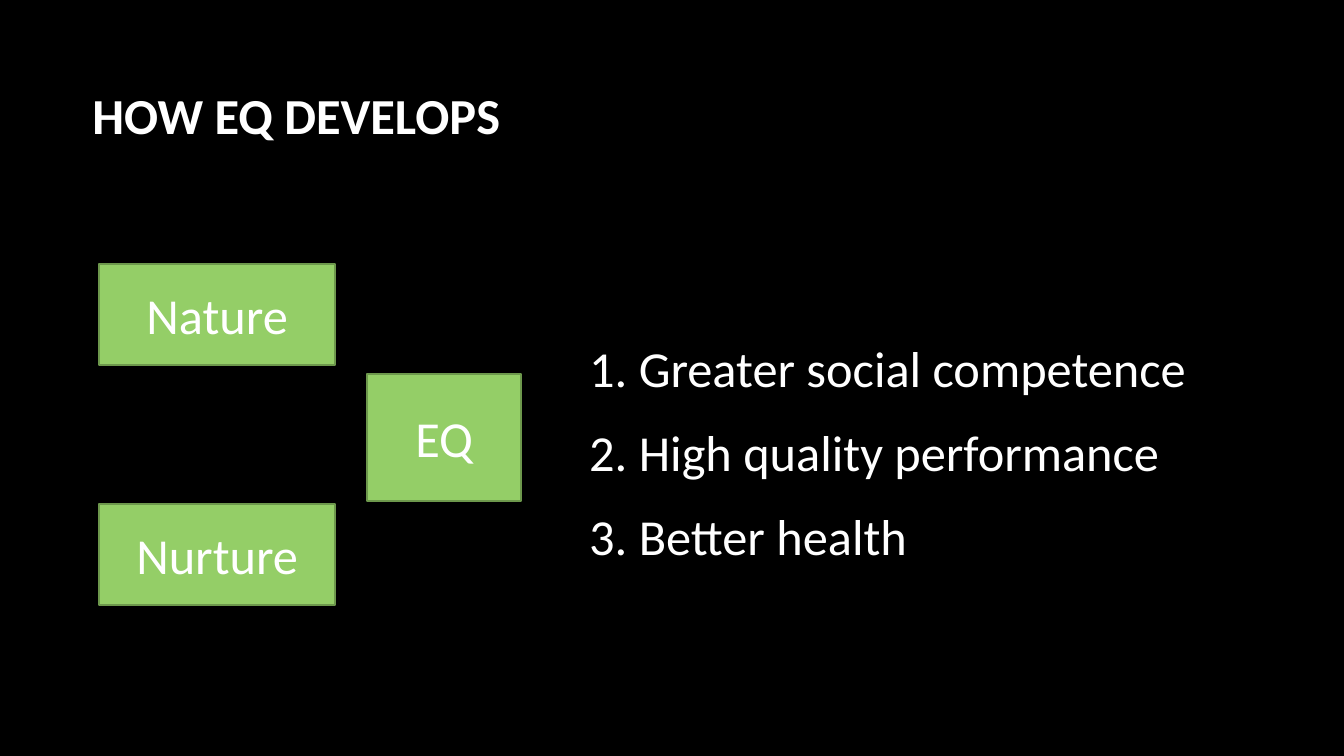
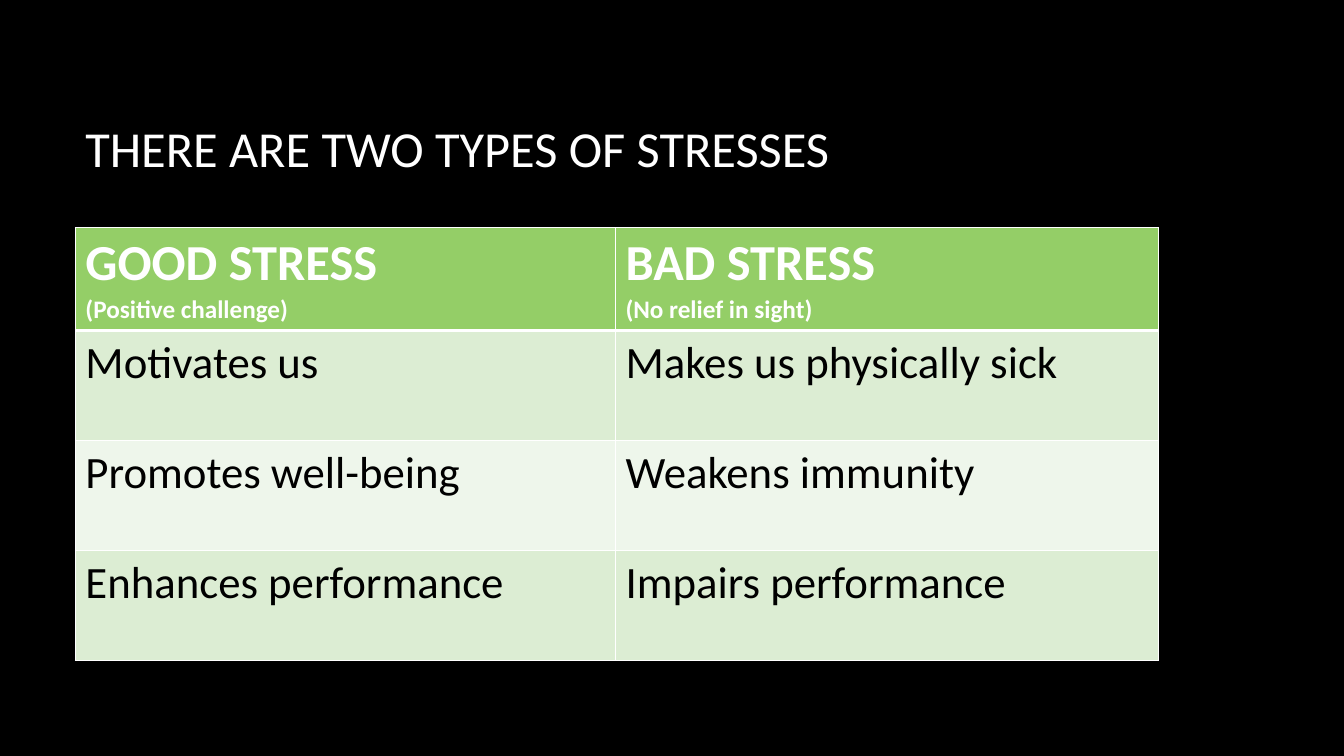
import pptx
import pptx.dml.color
import pptx.enum.shapes
import pptx.enum.text
import pptx.oxml
import pptx.oxml.ns
import pptx.util
from dataclasses import dataclass

Cm = pptx.util.Cm
Pt = pptx.util.Pt
color = pptx.dml.color.RGBColor.from_string
Align = pptx.enum.text.PP_ALIGN
Anchor = pptx.enum.text.MSO_ANCHOR


@dataclass(frozen=True)
class Theme:
    font: str = "Calibri"
    background: str = "000000"
    light: str = "FFFFFF"
    dark: str = "000000"
    green: str = "94CE67"
    outline: str = "6D984C"
    bands: tuple = ("DCEDD3", "EEF6EB")
    large: int = 36
    body: int = 32
    small: int = 18


theme = Theme()


def write(frame, text, sizes=(theme.large,), ink=theme.light, bold=False,
          align=Align.LEFT, anchor=Anchor.TOP, wrap=True):
    frame.word_wrap = wrap
    frame.vertical_anchor = anchor
    for index, line in enumerate(text.split("\n")):
        para = frame.add_paragraph() if index else frame.paragraphs[0]
        para.alignment = align
        span = para.add_run()
        span.text = line
        span.font.name = theme.font
        span.font.size = Pt(sizes[index])
        span.font.bold = bold
        span.font.color.rgb = color(ink)


def set_borders(cell, top, bottom):
    properties = cell._tc.get_or_add_tcPr()
    for side, width in (("L", 1), ("R", 1), ("T", top), ("B", bottom)):
        properties.append(pptx.oxml.parse_xml(
            f'<a:ln{side} {pptx.oxml.ns.nsdecls("a")} w="{Pt(width)}">'
            f'<a:solidFill><a:srgbClr val="{theme.light}"/></a:solidFill>'
            f'</a:ln{side}>'))


deck = pptx.Presentation()
deck.slide_width = Cm(33.87)
deck.slide_height = Cm(19.05)
master_fill = deck.slide_master.background.fill
master_fill.solid()
master_fill.fore_color.rgb = color(theme.background)

pages = []
for title, left, top, bold in (
    ("HOW EQ DEVELOPS", 2.08, 0.86, True),
    ("THERE ARE TWO TYPES OF STRESSES", 1.9, 1.7, False),
):
    page = deck.slides.add_slide(deck.slide_layouts[6])
    box = page.shapes.add_textbox(Cm(left), Cm(top), Cm(28.14), Cm(4.04))
    write(box.text_frame, title, bold=bold, anchor=Anchor.MIDDLE)
    pages.append(page)
eq_page, stress_page = pages

for label, left, top, width, height in (
    ("EQ", 9.25, 9.42, 3.89, 3.2),
    ("Nurture", 2.5, 12.7, 5.95, 2.54),
    ("Nature", 2.5, 6.65, 5.95, 2.54),
):
    box = eq_page.shapes.add_shape(
        pptx.enum.shapes.MSO_SHAPE.RECTANGLE, Cm(left), Cm(top), Cm(width), Cm(height))
    box.shadow.inherit = False
    box.fill.solid()
    box.fill.fore_color.rgb = color(theme.green)
    box.line.color.rgb = color(theme.outline)
    box.line.width = Pt(1.5)
    write(box.text_frame, label, align=Align.CENTER, anchor=Anchor.MIDDLE)

benefits = ("Greater social competence", "High quality performance", "Better health")
for index, benefit in enumerate(benefits):
    box = eq_page.shapes.add_textbox(
        Cm(14.6), Cm(8.36 + 2.12 * index), Cm(16), Cm(1.8))
    write(box.text_frame, f"{index + 1}. {benefit}")

stress_rows = (
    ("GOOD STRESS\n(Positive challenge)", "BAD STRESS\n(No relief in sight)"),
    ("Motivates us", "Makes us physically sick"),
    ("Promotes well-being", "Weakens immunity"),
    ("Enhances performance", "Impairs performance"),
)
table = stress_page.shapes.add_table(
    len(stress_rows), 2, Cm(1.9), Cm(5.74), Cm(27.3), Cm(10.9)).table
for column, width in zip(table.columns, (13.61, 13.69)):
    column.width = Cm(width)
for row_index, texts in enumerate(stress_rows):
    header = row_index == 0
    table.rows[row_index].height = Cm(2.59 if header else 2.77)
    for column_index, text in enumerate(texts):
        cell = table.cell(row_index, column_index)
        set_borders(cell, top=3 if row_index == 1 else 1, bottom=3 if header else 1)
        cell.fill.solid()
        cell.fill.fore_color.rgb = color(
            theme.green if header else theme.bands[(row_index - 1) % 2])
        write(cell.text_frame, text, bold=header,
              sizes=(theme.large, theme.small) if header else (theme.body,),
              ink=theme.light if header else theme.dark)

deck.save("out.pptx")
